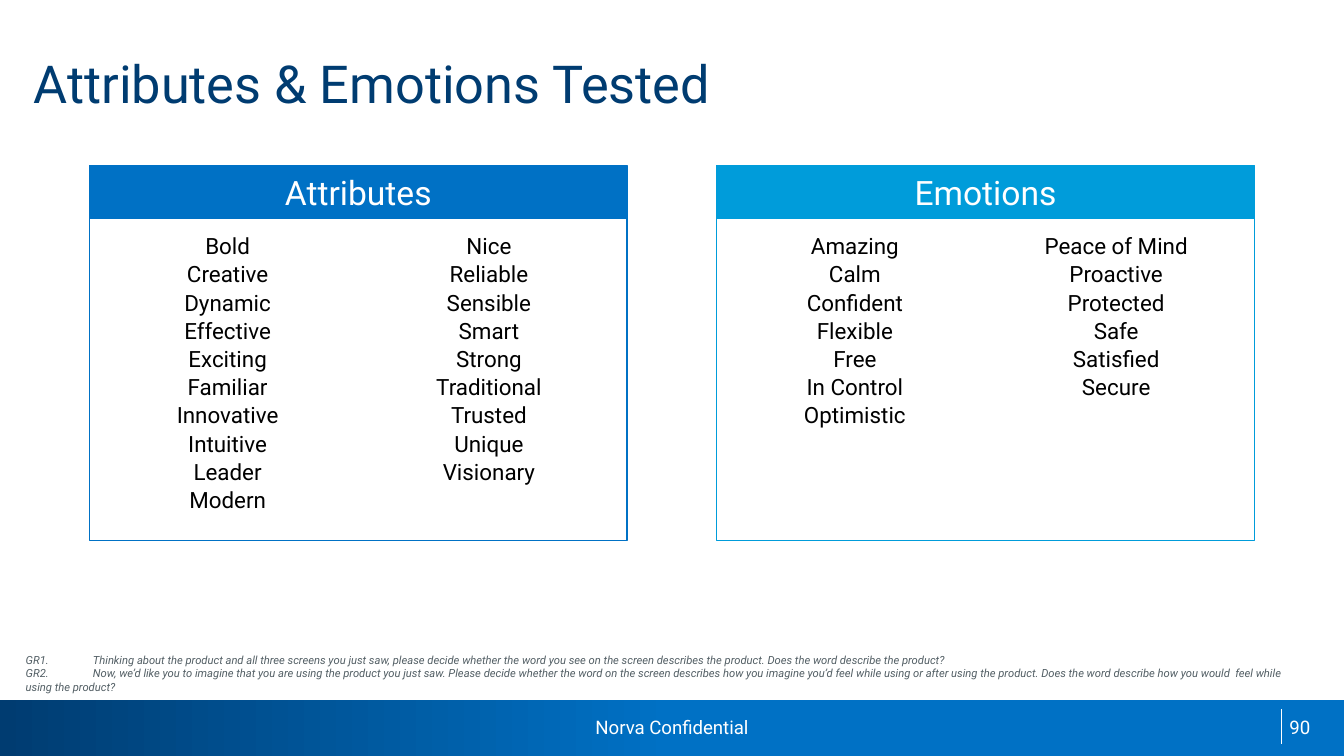
from dataclasses import dataclass
from itertools import zip_longest

from lxml import etree
from pptx import Presentation
from pptx.dml.color import RGBColor
from pptx.enum import shapes, text
from pptx.oxml.ns import qn
from pptx.util import Pt

FONT = "Roboto"
NAVY, BLUE, CYAN, WHITE = "003C71", "0071C5", "009CDA", "FFFFFF"
BLACK, GREY = "000000", "535F65"
LEFT, CENTER, RIGHT = text.PP_ALIGN.LEFT, text.PP_ALIGN.CENTER, text.PP_ALIGN.RIGHT
TOP, MIDDLE = text.MSO_ANCHOR.TOP, text.MSO_ANCHOR.MIDDLE
CARD_TOP, CARD_W, CARD_H, HEADER_H = 88.56, 288, 200.88, 28.8
TABLE_TOP, TABLE_INSET, ROW_H = 124.56, 4, 15.12


@dataclass
class Card:
    title: str
    left: float
    color: str
    columns: list[list[str]]


CARDS = [
    Card("Attributes", 48, BLUE, [
        ["Bold", "Creative", "Dynamic", "Effective", "Exciting", "Familiar",
         "Innovative", "Intuitive", "Leader", "Modern"],
        ["Nice", "Reliable", "Sensible", "Smart", "Strong", "Traditional",
         "Trusted", "Unique", "Visionary"]]),
    Card("Emotions", 384, CYAN, [
        ["Amazing", "Calm", "Confident", "Flexible", "Free", "In Control", "Optimistic"],
        ["Peace of Mind", "Proactive", "Protected", "Safe", "Satisfied", "Secure"]]),
]
NOTES = (
    "GR1.\tThinking about the product and all three screens you just saw, please decide "
    "whether the word you see on the screen describes the product. Does the word describe "
    "the product?\n"
    "GR2.\tNow, we’d like you to imagine that you are using the product you just saw. "
    "Please decide whether the word on the screen describes how you imagine you’d feel "
    "while using or after using the product. Does the word describe how you would \tfeel "
    "while using the product?"
)


def rgb(color: str) -> RGBColor:
    return RGBColor.from_string(color)


def write(tf, words: str, size: float, color: str, align=LEFT, italic=False) -> None:
    tf.text = words
    for p in tf.paragraphs:
        p.alignment = align
        for r in p.runs:
            r.font.name, r.font.size, r.font.italic = FONT, Pt(size), italic
            r.font.color.rgb = rgb(color)


def add_text(s, box: tuple, words: str, size: float, color: str, align=LEFT,
             anchor=TOP, italic=False, inset=(7.2, 3.6)):
    tf = s.shapes.add_textbox(*map(Pt, box)).text_frame
    tf.word_wrap, tf.vertical_anchor = True, anchor
    tf.margin_left = tf.margin_right = Pt(inset[0])
    tf.margin_top = tf.margin_bottom = Pt(inset[1])
    write(tf, words, size, color, align, italic)
    return tf


def add_rect(s, box: tuple, fill: str = "", line: str = ""):
    sp = s.shapes.add_shape(shapes.MSO_SHAPE.RECTANGLE, *map(Pt, box))
    sp.shadow.inherit = False
    if fill:
        sp.fill.solid()
        sp.fill.fore_color.rgb = rgb(fill)
    else:
        sp.fill.background()
    if line:
        sp.line.color.rgb, sp.line.width = rgb(line), Pt(0.75)
    else:
        sp.line.fill.background()
    return sp


def add_footer(s) -> None:
    bar = add_rect(s, (0, 375, 720, 30), BLUE)
    bar.fill.gradient()
    bar.fill.gradient_angle = 0
    for stop, color, position in zip(bar.fill.gradient_stops, (NAVY, BLUE), (0, 0.5)):
        stop.color.rgb, stop.position = rgb(color), position
    rule = s.shapes.add_connector(shapes.MSO_CONNECTOR.STRAIGHT,
                                  *map(Pt, (686.5, 380, 686.5, 398.7)))
    rule.line.color.rgb, rule.line.width = rgb(WHITE), Pt(0.75)
    etree.SubElement(rule._element.spPr, qn("a:effectLst"))
    add_text(s, (234, 375, 252, 29.5), "Norva Confidential", 10, WHITE, CENTER, MIDDLE,
             inset=(0, 0))
    add_text(s, (541.5, 380, 167.5, 21.6), "90", 10, WHITE, RIGHT)


def add_words(s, card: Card) -> None:
    rows = list(zip_longest(*card.columns, fillvalue=""))
    table = s.shapes.add_table(
        len(rows), 2, Pt(card.left + TABLE_INSET), Pt(TABLE_TOP),
        Pt(CARD_W - 2 * TABLE_INSET), Pt(ROW_H * len(rows))).table
    table.first_row = table.horz_banding = False
    for i, words in enumerate(rows):
        table.rows[i].height = Pt(ROW_H)
        for j, word in enumerate(words):
            cell = table.cell(i, j)
            cell.fill.background()
            cell.margin_left = cell.margin_right = cell.margin_top = Pt(0.7)
            cell.margin_bottom = 0
            write(cell.text_frame, word, 12, BLACK, CENTER)
            if not word:  # keeps an empty cell from stretching its row
                p = cell.text_frame.paragraphs[0]
                etree.SubElement(p._p, qn("a:endParaRPr"), sz="1200")


def add_card(s, card: Card) -> None:
    header = add_rect(s, (card.left, CARD_TOP, CARD_W, HEADER_H), card.color)
    header.text_frame.vertical_anchor = MIDDLE
    write(header.text_frame, card.title, 18, WHITE, CENTER)
    add_words(s, card)
    add_rect(s, (card.left, CARD_TOP, CARD_W, CARD_H), line=card.color)


def add_notes(s) -> None:
    tf = add_text(s, (6.7, 346.3, 694, 29), NOTES, 6, GREY, italic=True)
    for p in tf.paragraphs:
        tabs = etree.SubElement(p._p.get_or_add_pPr(), qn("a:tabLst"))
        for stop in (36, 648):
            etree.SubElement(tabs, qn("a:tab"), pos=str(Pt(stop)), algn="l")


def main() -> None:
    prs = Presentation()
    prs.slide_width, prs.slide_height = Pt(720), Pt(405)
    s = prs.slides.add_slide(prs.slide_layouts[5])
    add_footer(s)
    title = s.shapes.title
    title.left, title.top, title.width, title.height = map(Pt, (18, 10.8, 684, 50.4))
    tf = title.text_frame
    tf.margin_left = tf.margin_right = tf.margin_top = tf.margin_bottom = 0
    tf.vertical_anchor = text.MSO_ANCHOR.BOTTOM
    write(tf, "Attributes & Emotions Tested", 28, NAVY)
    for card in CARDS:
        add_card(s, card)
    add_notes(s)
    prs.save("out.pptx")


if __name__ == "__main__":
    main()
